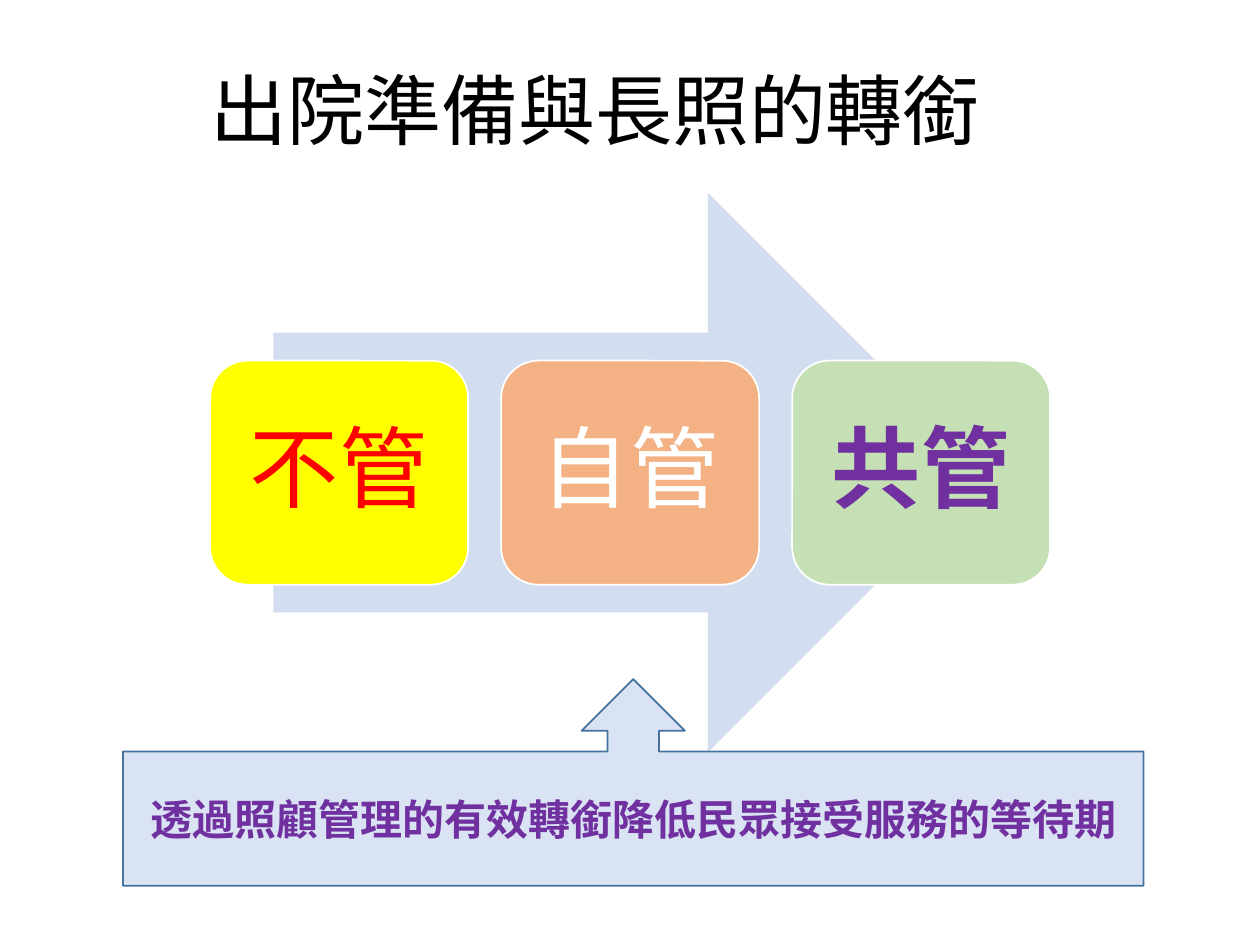
from dataclasses import dataclass

from pptx import Presentation
from pptx.dml.color import RGBColor
from pptx.enum.shapes import MSO_SHAPE
from pptx.enum.text import MSO_ANCHOR, PP_ALIGN
from pptx.util import Pt

ARROW = MSO_SHAPE.RIGHT_ARROW
ROUND = MSO_SHAPE.ROUNDED_RECTANGLE
CALLOUT = MSO_SHAPE.UP_ARROW_CALLOUT
TOP, MIDDLE = MSO_ANCHOR.TOP, MSO_ANCHOR.MIDDLE
LEFT, CENTER = PP_ALIGN.LEFT, PP_ALIGN.CENTER
FONT = "Calibri"
COLORS = {
    "black": "000000",
    "white": "FFFFFF",
    "pale": "D2DEEF",
    "yellow": "FFFF00",
    "orange": "F4B183",
    "green": "C5E0B4",
    "red": "FF0000",
    "purple": "7030A0",
    "blue": "DAE3F3",
    "edge": "43739E",
}


@dataclass
class Box:
    left: float
    top: float
    width: float
    height: float


@dataclass
class Label:
    text: str
    size: float
    color: str
    bold: bool = False
    spacing: float = 1.0


@dataclass
class Stage:
    label: Label
    fill: str


STAGES = [
    Stage(Label("不管", 51, "red", spacing=0.9), "yellow"),
    Stage(Label("自管", 51, "white", spacing=0.9), "orange"),
    Stage(Label("共管", 51, "purple", True, 0.9), "green"),
]
FIRST = Box(120.1, 206.1, 147.4, 128)
STEP = 166.3


def paint(name: str) -> RGBColor:
    """Return the named colour."""
    return RGBColor.from_string(COLORS[name])


def write(shape, label: Label, align=CENTER, anchor=MIDDLE) -> None:
    """Write one styled line of text into a shape."""
    frame = shape.text_frame
    frame.word_wrap = True
    frame.vertical_anchor = anchor
    line = frame.paragraphs[0]
    line.alignment = align
    line.line_spacing = label.spacing
    run = line.add_run()
    run.text = label.text
    run.font.name = FONT
    run.font.size = Pt(label.size)
    run.font.bold = label.bold
    run.font.color.rgb = paint(label.color)


def draw(slide, kind, box: Box, fill: str, edge: str | None = None):
    """Draw a filled shape, outlined when an edge colour is given."""
    shape = slide.shapes.add_shape(
        kind, Pt(box.left), Pt(box.top), Pt(box.width), Pt(box.height)
    )
    shape.shadow.inherit = False
    shape.fill.solid()
    shape.fill.fore_color.rgb = paint(fill)
    if edge:
        shape.line.color.rgb = paint(edge)
        shape.line.width = Pt(1)
    else:
        shape.line.fill.background()
    return shape


def main() -> None:
    """Build and save the slide."""
    deck = Presentation()
    deck.slide_width, deck.slide_height = Pt(720), Pt(540)
    slide = deck.slides.add_slide(deck.slide_layouts[6])

    title = slide.shapes.add_textbox(Pt(113), Pt(38), Pt(590.4), Pt(73.4))
    write(title, Label("出院準備與長照的轉銜", 44, "black", spacing=0.9), LEFT, TOP)

    draw(slide, ARROW, Box(156.2, 110.2, 408.2, 319.7), "pale")
    for index, stage in enumerate(STAGES):
        box = Box(FIRST.left + index * STEP, FIRST.top, FIRST.width, FIRST.height)
        write(draw(slide, ROUND, box, stage.fill, "white"), stage.label)

    note = draw(slide, CALLOUT, Box(70.3, 388.1, 583.2, 118.1), "blue", "edge")
    write(note, Label("透過照顧管理的有效轉銜降低民眾接受服務的等待期", 24, "purple", True))

    deck.save("out.pptx")


if __name__ == "__main__":
    main()
